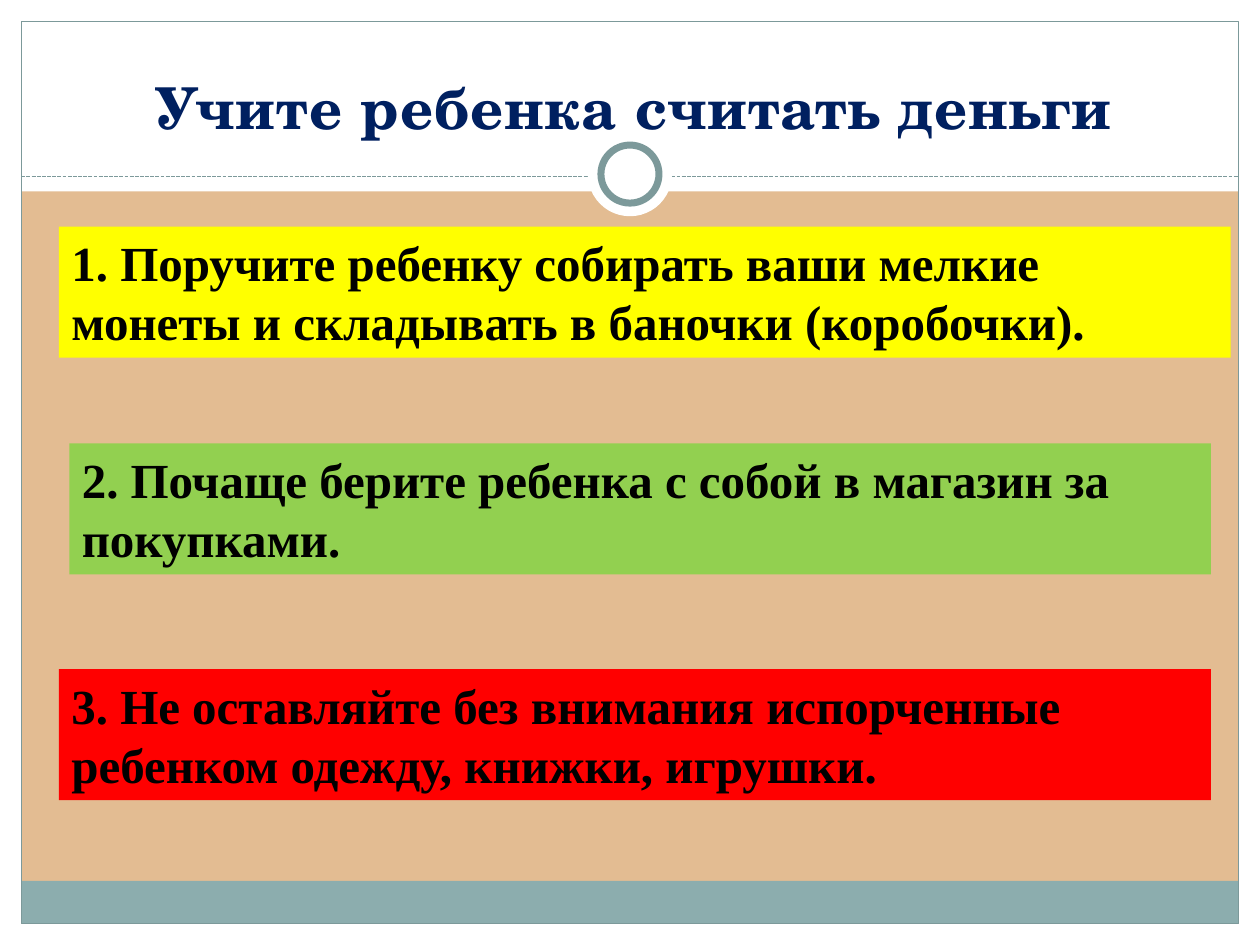
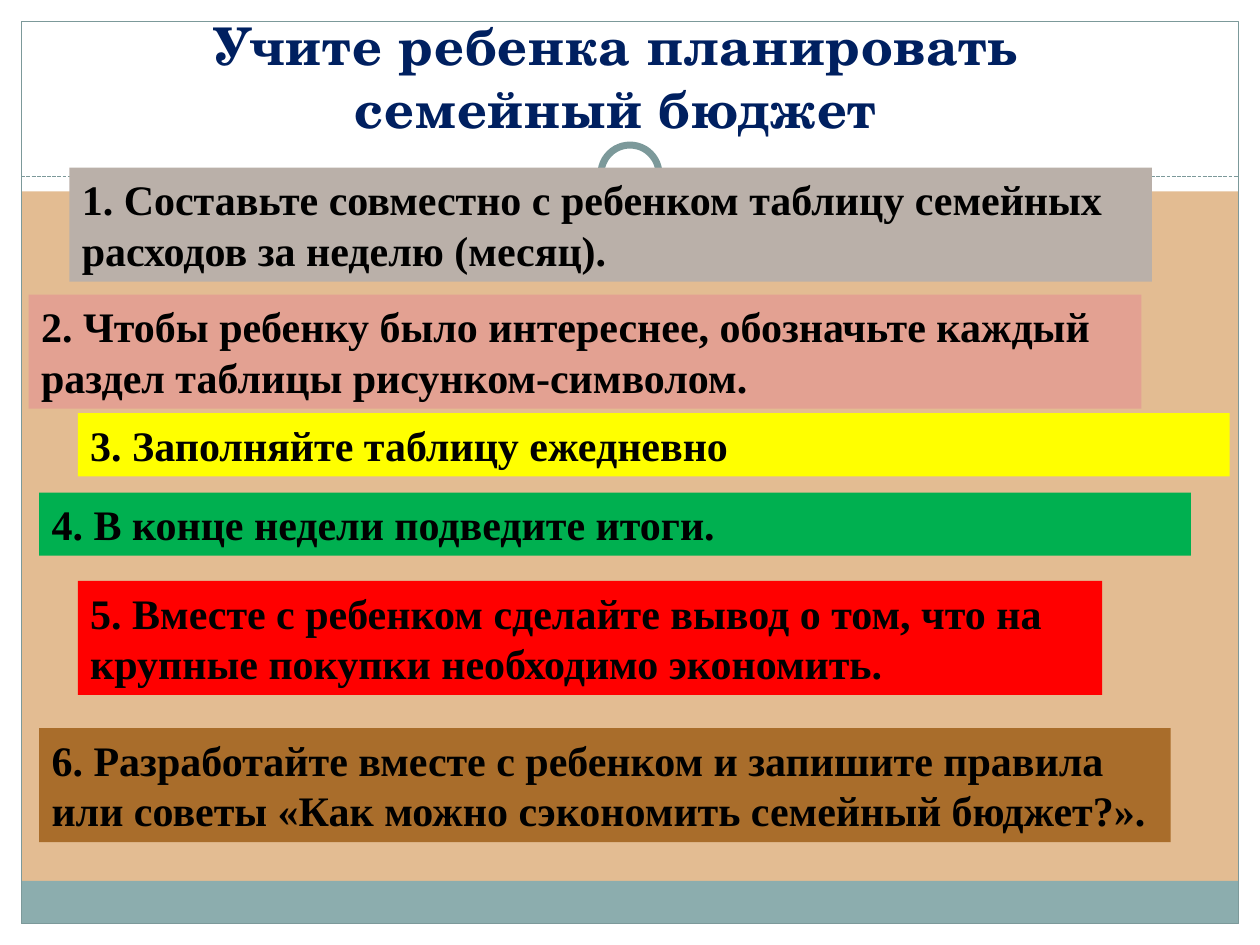
from dataclasses import dataclass

from pptx import Presentation
from pptx.dml.color import RGBColor
from pptx.enum.dml import MSO_LINE
from pptx.enum.shapes import MSO_CONNECTOR, MSO_SHAPE
from pptx.enum.text import MSO_ANCHOR as Anchor, MSO_AUTO_SIZE as AutoSize, PP_ALIGN as Align
from pptx.oxml.ns import qn
from pptx.shapes.autoshape import Shape
from pptx.slide import Slide
from pptx.util import Cm, Pt
from lxml.etree import SubElement

SLIDE_W, SLIDE_H = 25.4, 19.05
EDGE = 0.43
HEADER_H = 3.86
RULE_Y = 3.56
FOOTER_H = 0.86
INNER_W = SLIDE_W - 2 * EDGE
RING_Y = 3.51

SAND, WHITE, TEAL, PALE_TEAL = "E3BC92", "FFFFFF", "7C999A", "8CADAE"
NAVY, BLACK, YELLOW, RED = "002060", "000000", "FFFF00", "FF0000"
TITLE_FONT, BODY_FONT = "TeX Gyre Schola", "Times New Roman"


@dataclass(frozen=True)
class Title:
    text: str
    left: float
    top: float
    width: float
    height: float
    size: float


@dataclass(frozen=True)
class Advice:
    text: str
    left: float
    top: float
    width: float
    fill: str
    lines: int = 2


@dataclass(frozen=True)
class Lesson:
    title: Title
    advice_size: float
    advice: tuple[Advice, ...]


LESSONS = (
    Lesson(
        Title("Учите ребенка считать деньги", 0.79, 0.76, 24, 2.21, 33),
        28,
        (
            Advice("1. Поручите ребенку собирать ваши мелкие монеты и складывать "
                   "в баночки (коробочки).", 1.19, 4.57, 23.62, YELLOW),
            Advice("2. Почаще берите ребенка с собой в магазин за покупками.",
                   1.4, 8.94, 23.01, "92D050"),
            Advice("3. Не оставляйте без внимания испорченные ребенком одежду, "
                   "книжки, игрушки.", 1.19, 13.49, 23.22, RED),
        ),
    ),
    Lesson(
        Title("Учите ребенка планировать семейный бюджет", 1.24, 0, 22.35, 2.92, 29.7),
        24,
        (
            Advice("1. Составьте совместно с ребенком таблицу семейных расходов "
                   "за неделю (месяц).", 1.4, 3.38, 21.82, "BAB0A9"),
            Advice("2. Чтобы ребенку было интереснее, обозначьте каждый раздел "
                   "таблицы рисунком-символом.", 0.58, 5.94, 22.43, "E3A192"),
            Advice("3. Заполняйте таблицу ежедневно", 1.57, 8.33, 23.22, YELLOW, 1),
            Advice("4. В конце недели подведите итоги.", 0.79, 9.93, 23.22, "00B050", 1),
            Advice("5. Вместе с ребенком сделайте вывод о том, что на крупные "
                   "покупки необходимо экономить.", 1.57, 11.71, 20.65, RED),
            Advice("6. Разработайте вместе с ребенком и запишите правила\n"
                   "или советы «Как можно сэкономить семейный бюджет?».",
                   0.79, 14.68, 22.81, "A96D2B"),
        ),
    ),
)


def rgb(color: str) -> RGBColor:
    return RGBColor.from_string(color)


def add_block(slide: Slide, left: float, top: float, width: float, height: float, *,
              fill: str | None = None, line: str | None = None, line_width: float = 0.75,
              kind: MSO_SHAPE = MSO_SHAPE.RECTANGLE) -> Shape:
    block = slide.shapes.add_shape(kind, Cm(left), Cm(top), Cm(width), Cm(height))
    block.shadow.inherit = False
    if fill:
        block.fill.solid()
        block.fill.fore_color.rgb = rgb(fill)
    else:
        block.fill.background()
    if line:
        block.line.color.rgb = rgb(line)
        block.line.width = Pt(line_width)
    else:
        block.line.fill.background()
    return block


def write(shape: Shape, text: str, *, font: str, size: float, color: str,
          align: Align = Align.LEFT, anchor: Anchor = Anchor.TOP,
          spacing: float = 0) -> None:
    """Fill the shape with bold text, one paragraph per line; spacing is in points."""
    frame = shape.text_frame
    frame.word_wrap = True
    frame.vertical_anchor = anchor
    frame.text = text
    for paragraph in frame.paragraphs:
        paragraph.alignment = align
        for run in paragraph.runs:
            run.font.name = font
            run.font.size = Pt(size)
            run.font.bold = True
            run.font.color.rgb = rgb(color)
            if spacing:
                run.font._element.set("spc", str(round(spacing * 100)))


def add_rule(slide: Slide) -> None:
    rule = slide.shapes.add_connector(MSO_CONNECTOR.STRAIGHT, Cm(EDGE), Cm(RULE_Y),
                                      Cm(SLIDE_W - EDGE), Cm(RULE_Y))
    rule.line.color.rgb = rgb(TEAL)
    rule.line.width = Pt(0.75)
    rule.line.dash_style = MSO_LINE.SQUARE_DOT
    SubElement(rule._element.spPr, qn("a:effectLst"))


def add_disc(slide: Slide, diameter: float, line: str | None = None) -> None:
    """Draw a white disc centred on the header ring."""
    add_block(slide, (SLIDE_W - diameter) / 2, RING_Y - diameter / 2, diameter, diameter,
              fill=WHITE, line=line, line_width=4, kind=MSO_SHAPE.OVAL)


def add_frame(slide: Slide) -> None:
    add_block(slide, 0, SLIDE_H - EDGE, SLIDE_W, EDGE, fill=WHITE)
    add_block(slide, 0, 0, SLIDE_W, HEADER_H, fill=WHITE)
    for left in (0, SLIDE_W - EDGE):
        add_block(slide, left, 0, EDGE, SLIDE_H, fill=WHITE)
    add_block(slide, EDGE, SLIDE_H - EDGE - FOOTER_H, INNER_W, FOOTER_H, fill=PALE_TEAL)
    add_block(slide, EDGE, EDGE, INNER_W, SLIDE_H - 2 * EDGE, line=TEAL)
    add_rule(slide)
    add_disc(slide, 1.7)
    add_disc(slide, 1.17, TEAL)


def add_title(slide: Slide, title: Title) -> None:
    heading = slide.shapes.add_textbox(Cm(title.left), Cm(title.top),
                                       Cm(title.width), Cm(title.height))
    write(heading, title.text, font=TITLE_FONT, size=title.size, color=NAVY,
          align=Align.CENTER, anchor=Anchor.BOTTOM, spacing=0.5)


def add_advice(slide: Slide, advice: Advice, size: float) -> None:
    height = 0.25 + Pt(advice.lines * size * 1.21).cm
    card = add_block(slide, advice.left, advice.top, advice.width, height, fill=advice.fill)
    write(card, advice.text, font=BODY_FONT, size=size, color=BLACK)
    card.text_frame.auto_size = AutoSize.SHAPE_TO_FIT_TEXT


def main() -> None:
    deck = Presentation()
    deck.slide_width, deck.slide_height = Cm(SLIDE_W), Cm(SLIDE_H)
    backdrop = deck.slide_master.background.fill
    backdrop.solid()
    backdrop.fore_color.rgb = rgb(SAND)
    for lesson in LESSONS:
        slide = deck.slides.add_slide(deck.slide_layouts[6])
        add_frame(slide)
        add_title(slide, lesson.title)
        for advice in lesson.advice:
            add_advice(slide, advice, lesson.advice_size)
    deck.save("out.pptx")


if __name__ == "__main__":
    main()
